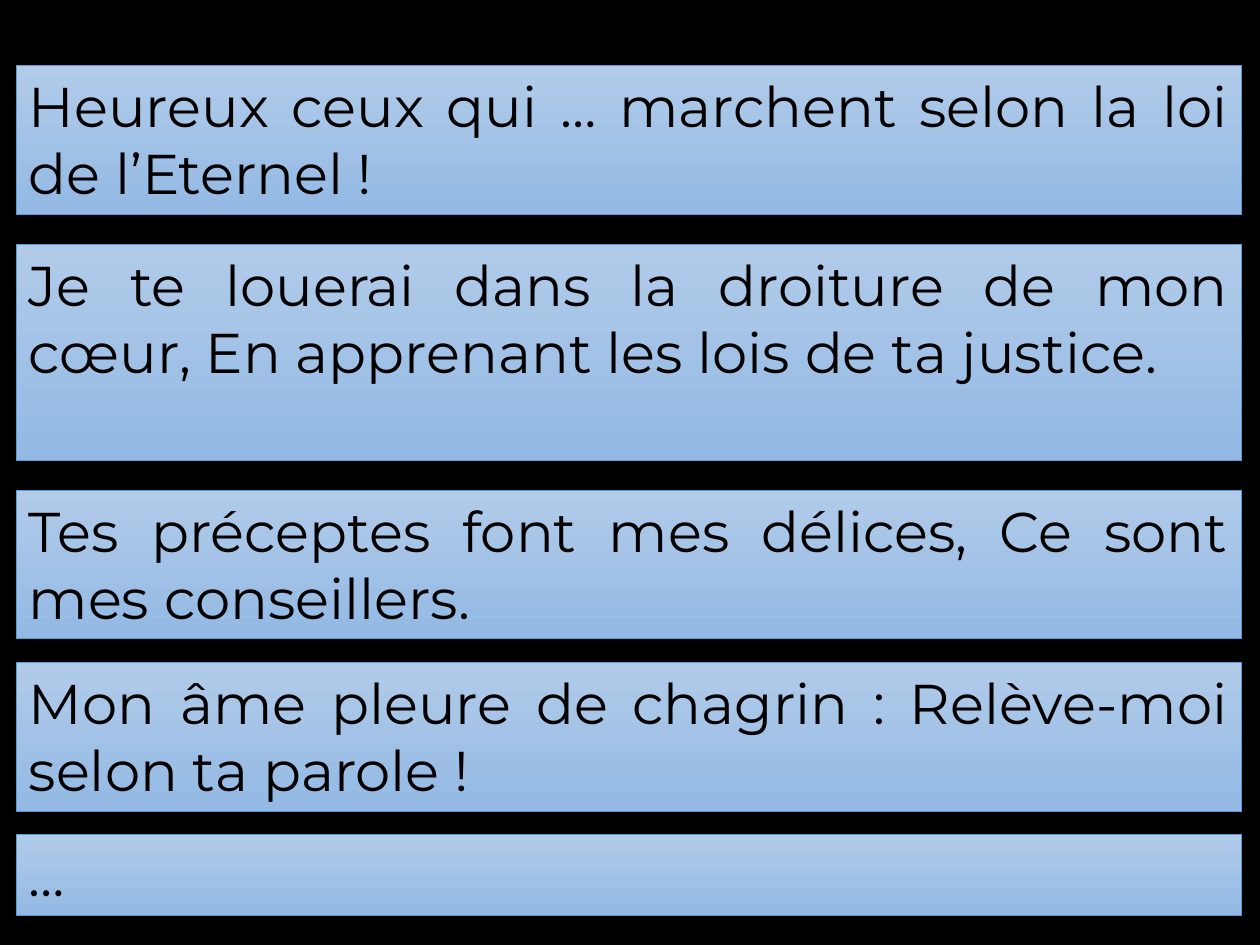
from dataclasses import dataclass

import pptx
import pptx.dml.color
import pptx.enum.shapes
import pptx.enum.text
import pptx.slide
import pptx.util
from pptx.dml.color import RGBColor
from pptx.util import Cm

BLACK = RGBColor(0x00, 0x00, 0x00)
LIGHT_BLUE = RGBColor(0xB1, 0xCB, 0xE9)
MEDIUM_BLUE = RGBColor(0x93, 0xB9, 0xE4)
BORDER_BLUE = RGBColor(0x5B, 0x9B, 0xD5)

LEFT = 0.33
WIDTH = 24.69
LINE_HEIGHT = 1.37
VERTICAL_MARGINS = 0.26


@dataclass(frozen=True)
class Verse:
    text: str
    top: float
    lines: int

    @property
    def height(self) -> float:
        return self.lines * LINE_HEIGHT + VERTICAL_MARGINS


VERSES = [
    Verse("Heureux ceux qui … marchent selon la loi de l’Eternel !", 1.32, 2),
    Verse("Je te louerai dans la droiture de mon cœur, "
          "En apprenant les lois de ta justice.", 4.92, 3),
    Verse("Tes préceptes font mes délices, Ce sont mes conseillers.", 9.88, 2),
    Verse("Mon âme pleure de chagrin : Relève-moi selon ta parole !", 13.35, 2),
    Verse("…", 16.82, 1),
]


def draw_verse(page: pptx.slide.Slide, verse: Verse) -> None:
    box = page.shapes.add_shape(
        pptx.enum.shapes.MSO_SHAPE.RECTANGLE,
        Cm(LEFT), Cm(verse.top), Cm(WIDTH), Cm(verse.height))
    box.shadow.inherit = False
    box.fill.gradient()
    box.fill.gradient_angle = 270
    for stop, color in zip(box.fill.gradient_stops, (LIGHT_BLUE, MEDIUM_BLUE)):
        stop.color.rgb = color
    box.line.color.rgb = BORDER_BLUE
    box.line.width = pptx.util.Pt(0.5)

    frame = box.text_frame
    frame.text = verse.text
    frame.word_wrap = True
    frame.vertical_anchor = pptx.enum.text.MSO_ANCHOR.TOP
    para = frame.paragraphs[0]
    para.alignment = pptx.enum.text.PP_ALIGN.JUSTIFY
    span = para.runs[0]
    span.font.name = "Montserrat"
    span.font.size = pptx.util.Pt(32)
    span.font.color.rgb = BLACK


def main() -> None:
    deck = pptx.Presentation()
    deck.slide_width, deck.slide_height = Cm(25.4), Cm(19.05)
    page = deck.slides.add_slide(deck.slide_layouts[6])
    page.background.fill.solid()
    page.background.fill.fore_color.rgb = BLACK
    for verse in VERSES:
        draw_verse(page, verse)
    deck.save("out.pptx")


if __name__ == "__main__":
    main()
